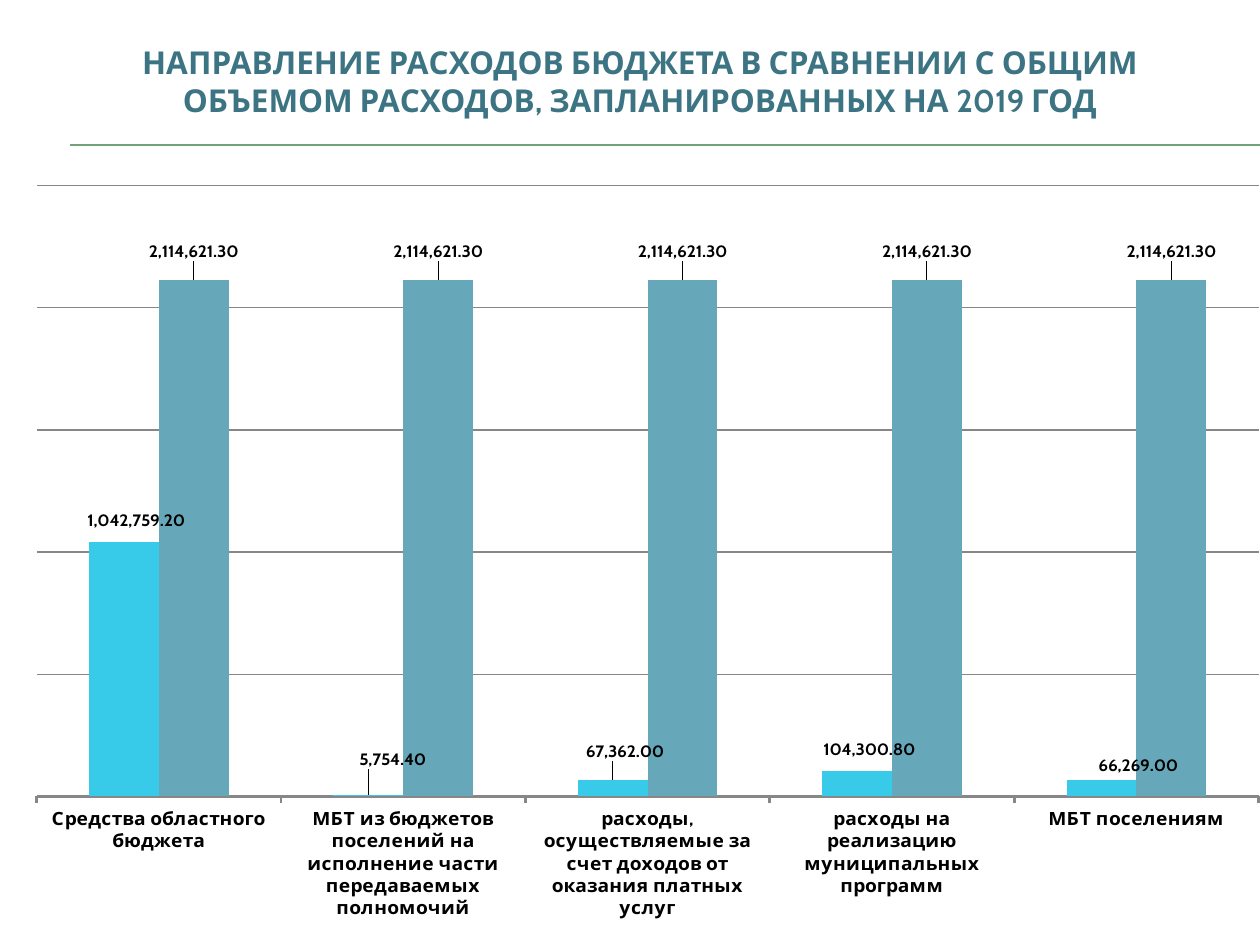
from dataclasses import dataclass

import pptx
import pptx.chart.data
import pptx.dml.color
import pptx.enum.chart
import pptx.enum.shapes
import pptx.enum.text
import pptx.oxml
import pptx.oxml.ns
import pptx.util
from pptx.util import Cm, Pt

FONT = "Cabin"
NUMBER_FORMAT = "#,##0.00"
CHART_NS = 'xmlns:c="http://schemas.openxmlformats.org/drawingml/2006/chart"'
CATEGORIES = [
    "Средства областного бюджета",
    "МБТ из бюджетов поселений на исполнение части передаваемых полномочий",
    "расходы, осуществляемые за счет доходов от оказания платных услуг",
    "расходы на реализацию муниципальных программ",
    "МБТ поселениям",
]


@dataclass
class Spending:
    name: str
    values: list[float]
    color: str
    label_shifts: list[tuple[float, float]]  # fractions of the chart's size


SPENDINGS = [
    Spending("Series 1", [1042759.2, 5754.4, 67362, 104300.8, 66269], "37CBE9",
             [(0.01, -0.01), (0.02, -0.03), (0.01, -0.02), (0.01, -0.01), (0.03, 0)]),
    Spending("Series 2", [2114621.3] * len(CATEGORIES), "66A7B9",
             [(0, -0.02)] * len(CATEGORIES)),
]


def rgb(color: str) -> pptx.dml.color.RGBColor:
    return pptx.dml.color.RGBColor.from_string(color)


def style_font(font, size: float, color: str, bold: bool = False) -> None:
    font.name = FONT
    font.size = Pt(size)
    font.bold = bold
    font.color.rgb = rgb(color)


def style_line(line, color: str, width: float) -> None:
    line.color.rgb = rgb(color)
    line.width = Pt(width)


def manual_layout(**parts: str | float):
    inner = "".join(f'<c:{key} val="{value}"/>' for key, value in parts.items())
    return pptx.oxml.parse_xml(
        f"<c:layout {CHART_NS}><c:manualLayout>{inner}</c:manualLayout></c:layout>")


def add_rule(slide, top: float) -> None:
    rule = slide.shapes.add_connector(
        pptx.enum.shapes.MSO_CONNECTOR.STRAIGHT, Cm(1.42), Cm(top), Cm(25.4), Cm(top))
    style_line(rule.line, "72A376", 0.75)
    properties = rule._element.spPr
    properties.append(properties.makeelement(pptx.oxml.ns.qn("a:effectLst"), {}))


def style_labels(series, spending: Spending) -> None:
    outside = pptx.enum.chart.XL_LABEL_POSITION.OUTSIDE_END
    labels = series.data_labels
    labels.show_value = True
    labels.number_format = NUMBER_FORMAT
    labels.number_format_is_linked = False
    labels.position = outside
    style_font(labels.font, 10, "000000", True)
    for index, (x, y) in enumerate(spending.label_shifts):
        label = series.points[index].data_label
        style_font(label.font, 10, "000000", True)
        label.position = outside
        element = label._dLbl
        element.insert(1, manual_layout(x=x, y=y))
        element.insert(2, pptx.oxml.parse_xml(
            f'<c:numFmt {CHART_NS} formatCode="{NUMBER_FORMAT}" sourceLinked="0"/>'))


def add_spending_chart(slide) -> None:
    data = pptx.chart.data.CategoryChartData(number_format=NUMBER_FORMAT)
    data.categories = CATEGORIES
    for spending in SPENDINGS:
        data.add_series(spending.name, spending.values)
    chart = slide.shapes.add_chart(
        pptx.enum.chart.XL_CHART_TYPE.COLUMN_CLUSTERED,
        Cm(0.71), Cm(3.73), Cm(24.69), Cm(14.81), data).chart
    chart.has_legend = False
    chart.has_title = False
    style_font(chart.font, 18, "000000")

    values = chart.value_axis
    values.visible = False
    values.minimum_scale, values.maximum_scale = 0, 2500000
    values.major_unit = 500000
    values.has_major_gridlines = True
    style_line(values.major_gridlines.format.line, "878787", 0.75)

    categories = chart.category_axis
    categories.major_tick_mark = pptx.enum.chart.XL_TICK_MARK.OUTSIDE
    style_font(categories.tick_labels.font, 11, "000000", True)
    style_line(categories.format.line, "878787", 1.5)

    plot = chart.plots[0]
    plot.gap_width = 150
    plot.overlap = 0
    plot.vary_by_categories = False
    for series, spending in zip(plot.series, SPENDINGS):
        series.format.fill.solid()
        series.format.fill.fore_color.rgb = rgb(spending.color)
        style_labels(series, spending)

    area = chart._chartSpace.chart.plotArea
    for layout in area.findall(pptx.oxml.ns.qn("c:layout")):
        area.remove(layout)
    area.insert(0, manual_layout(layoutTarget="inner", xMode="edge", yMode="edge",
                                 x=0, y=0, w=1, h=0.88))


def set_title(slide) -> None:
    title = slide.shapes.title
    title.left, title.top, title.width, title.height = Cm(0.84), Cm(0.53), Cm(24.13), Cm(2.21)
    frame = title.text_frame
    frame.text = ("НАПРАВЛЕНИЕ РАСХОДОВ БЮДЖЕТА В СРАВНЕНИИ С ОБЩИМ "
                  "ОБЪЕМОМ РАСХОДОВ, ЗАПЛАНИРОВАННЫХ НА 2019 ГОД")
    frame.word_wrap = True
    frame.auto_size = pptx.enum.text.MSO_AUTO_SIZE.NONE
    frame.vertical_anchor = pptx.enum.text.MSO_ANCHOR.MIDDLE
    heading = frame.paragraphs[0]
    heading.alignment = pptx.enum.text.PP_ALIGN.CENTER
    style_font(heading.font, 18, "3C7483", True)


def main() -> None:
    deck = pptx.Presentation()
    deck.slide_width, deck.slide_height = Cm(25.4), Cm(19.05)
    slide = deck.slides.add_slide(deck.slide_layouts[5])
    for top in (2.92, 2.94):
        add_rule(slide, top)
    set_title(slide)
    add_spending_chart(slide)
    deck.save("out.pptx")


if __name__ == "__main__":
    main()
